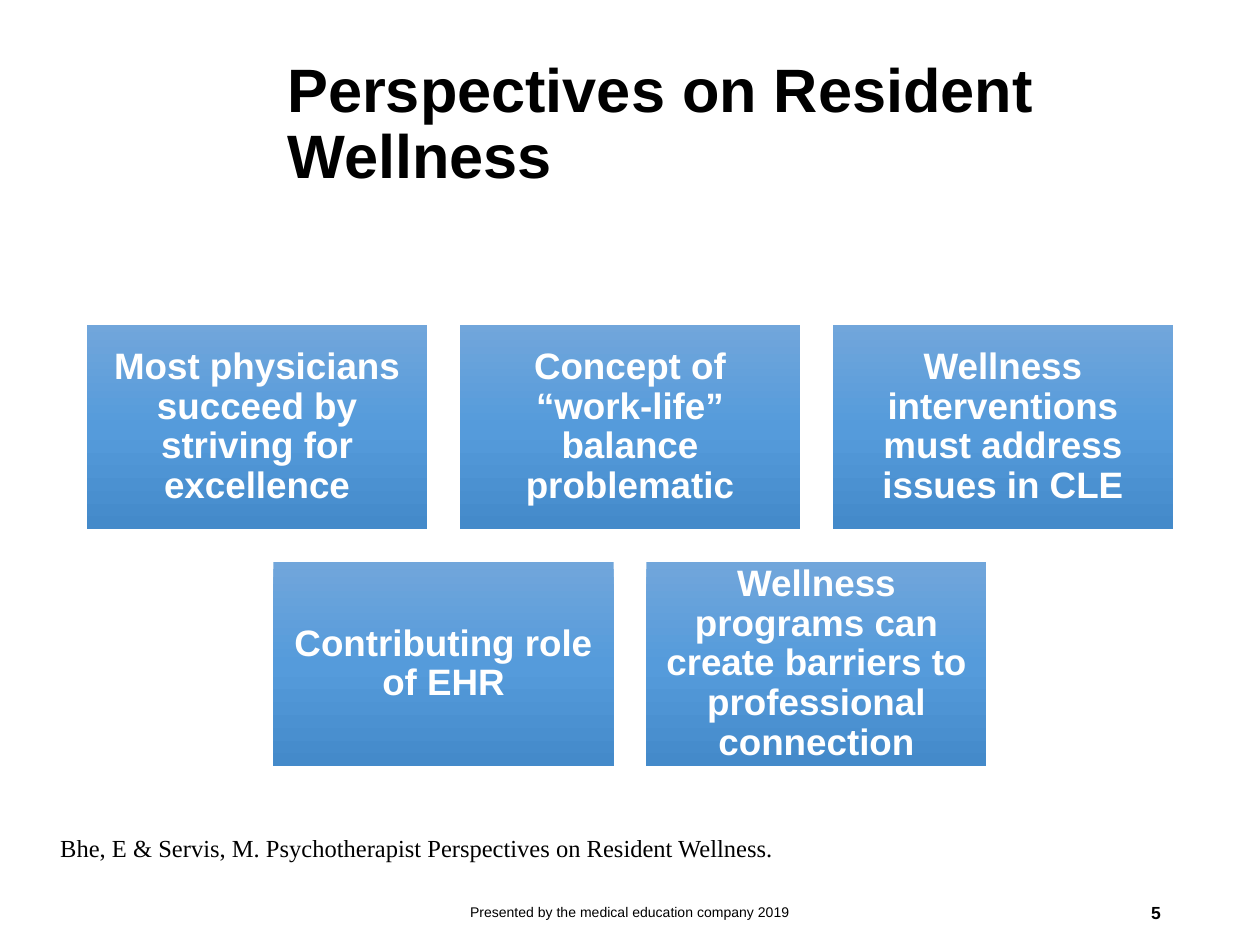
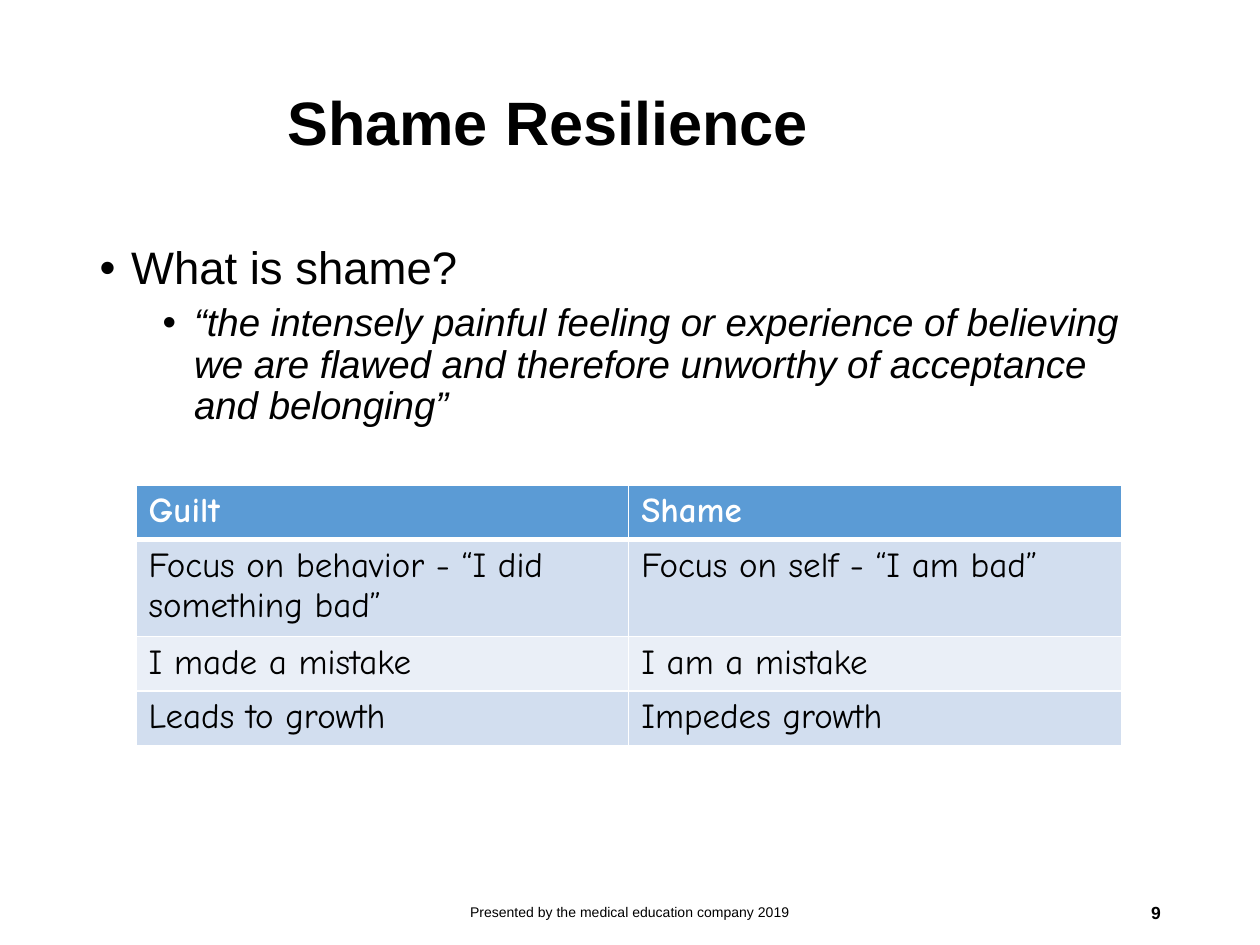
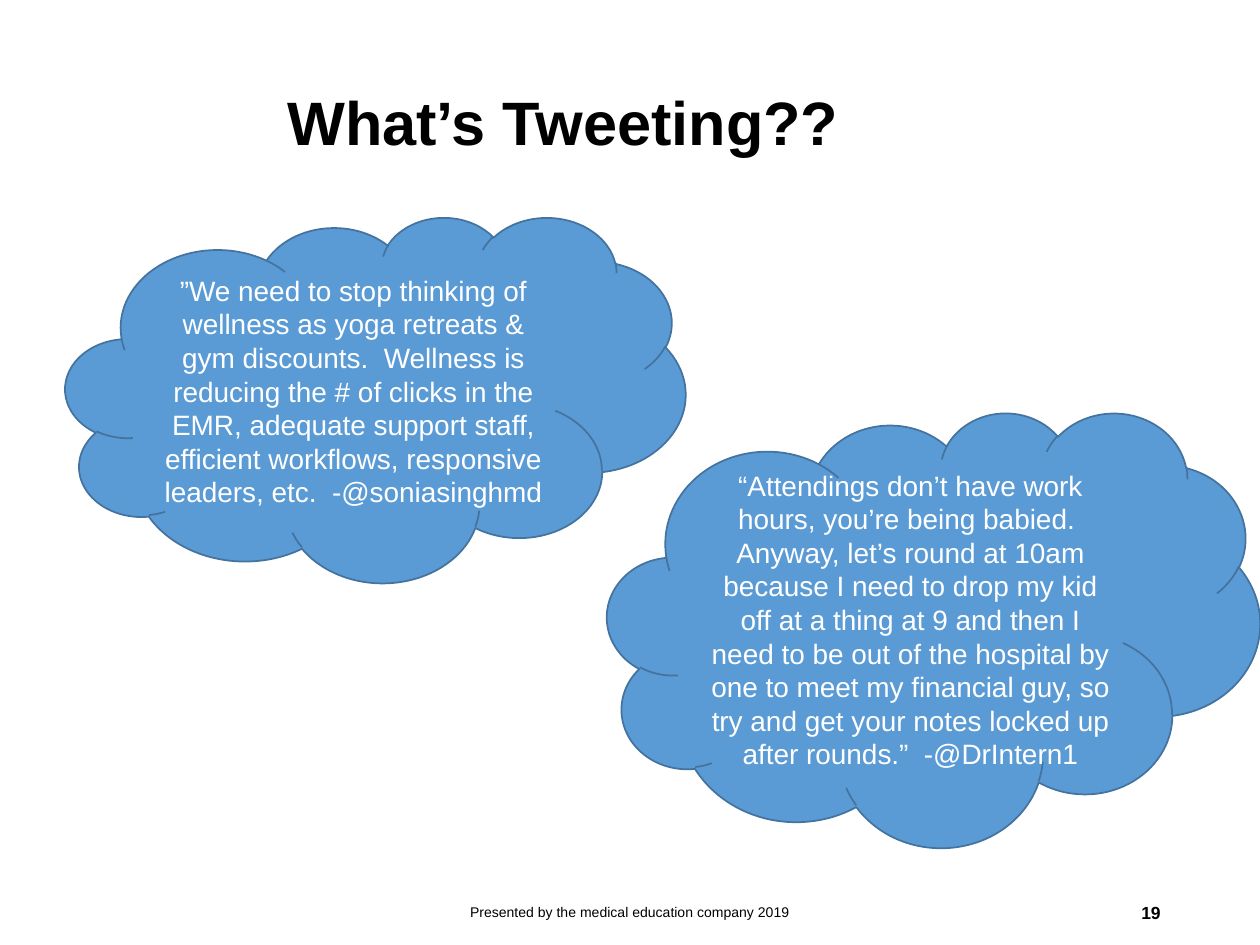
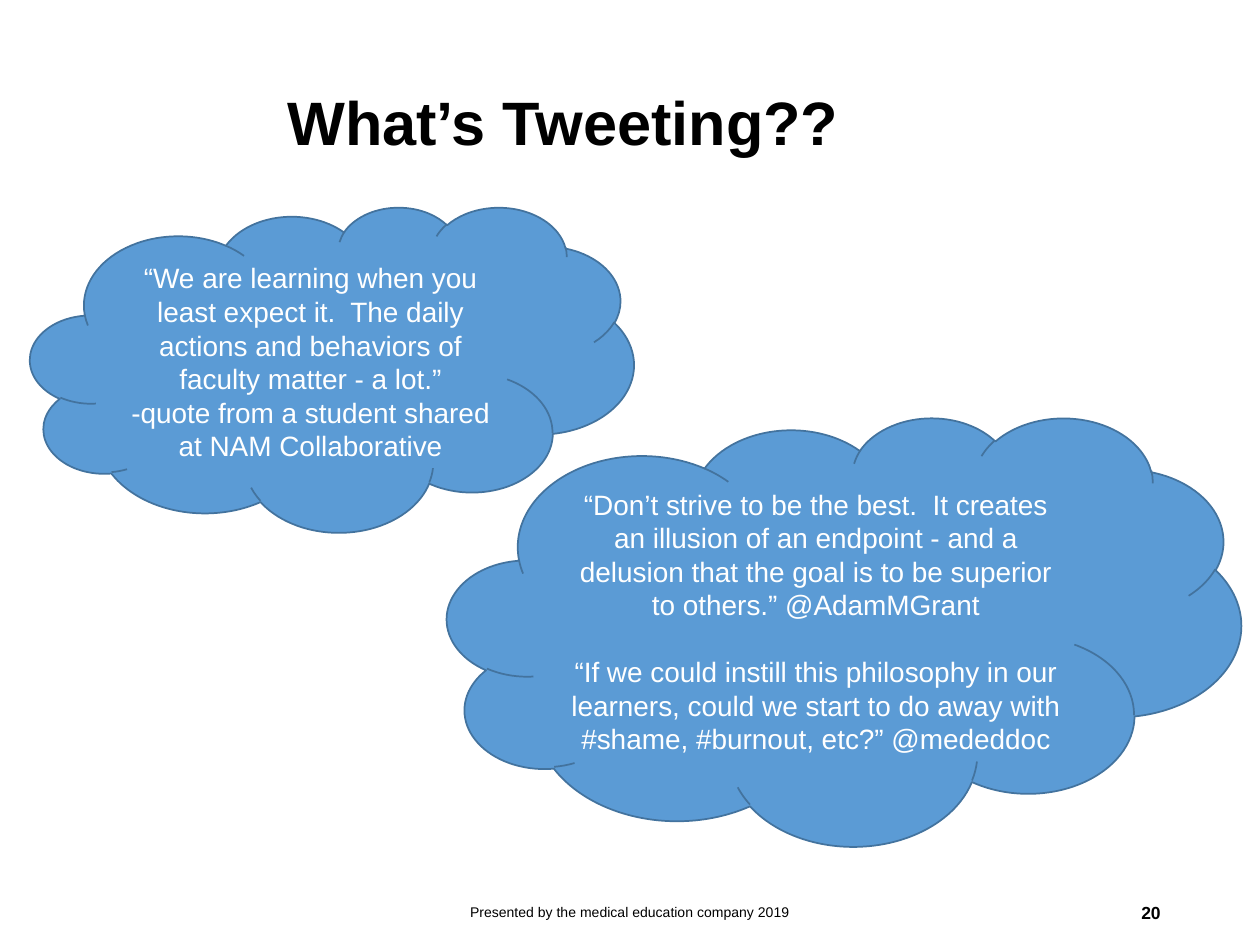
from copy import deepcopy
from dataclasses import dataclass

from lxml import etree
from pptx import Presentation
from pptx.dml.color import RGBColor
from pptx.enum.shapes import MSO_SHAPE
from pptx.enum.text import MSO_ANCHOR, MSO_AUTO_SIZE, PP_ALIGN
from pptx.oxml.ns import qn
from pptx.presentation import Presentation as Deck
from pptx.shapes.autoshape import Shape
from pptx.slide import Slide
from pptx.table import _Cell
from pptx.text.text import TextFrame, _Paragraph
from pptx.util import Inches, Length, Pt

LEFT, CENTER, RIGHT = PP_ALIGN.LEFT, PP_ALIGN.CENTER, PP_ALIGN.RIGHT
MIDDLE = MSO_ANCHOR.MIDDLE
RECTANGLE, CLOUD = MSO_SHAPE.RECTANGLE, MSO_SHAPE.CLOUD
NO_AUTOFIT = MSO_AUTO_SIZE.NONE
CONTENT_LAYOUT, TITLE_ONLY_LAYOUT = 1, 5


@dataclass(frozen=True)
class Theme:
    ink: RGBColor = RGBColor(0, 0, 0)
    white: RGBColor = RGBColor(255, 255, 255)
    accent: RGBColor = RGBColor.from_string("5B9BD5")
    outline: RGBColor = RGBColor.from_string("43739E")
    row_bands: tuple[RGBColor, ...] = (
        RGBColor.from_string("D2DEEF"), RGBColor.from_string("EAEFF7"))
    gradient: tuple[RGBColor, ...] = (
        RGBColor.from_string("71A6DB"), RGBColor.from_string("559BDB"),
        RGBColor.from_string("448ACA"))
    sans: str = "Arial"
    serif: str = "Times New Roman"
    casual: str = "Comic Neue"
    title: Length = Pt(35)
    bullet: Length = Pt(26)
    sub_bullet: Length = Pt(22)
    card: Length = Pt(21)
    table: Length = Pt(20)
    quote: Length = Pt(16)
    citation: Length = Pt(14)
    page: Length = Pt(10)
    footer: Length = Pt(8)
    tight: float = 0.9


THEME = Theme()


@dataclass(frozen=True)
class Box:
    """A place on the slide, in inches."""
    left: float
    top: float
    width: float
    height: float

    def lengths(self) -> tuple[Length, ...]:
        return tuple(Inches(v) for v in (self.left, self.top, self.width, self.height))


@dataclass(frozen=True)
class Tweet:
    cloud: Box
    quotes: tuple[str, ...]
    gap: float = 0


SLIDE_WIDTH, SLIDE_HEIGHT = 10, 7.5
TITLE_BOX = Box(2.18, 0.27, 7.14, 1.45)
BODY_BOX = Box(0.69, 1.9, 8.62, 4.85)
FOOTER_BOX = Box(3.31, 7.04, 3.38, 0.4)
PAGE_BOX = Box(7.06, 7.04, 2.25, 0.4)
CITATION_BOX = Box(0.38, 6.56, 5.86, 0.34)
TABLE_BOX = Box(1.08, 3.85, 7.82, 1.64)
CARD_WIDTH, CARD_HEIGHT, CARD_GAP, CARDS_TOP = 2.7, 1.62, 0.26, 2.58

FOOTER = "Presented by the medical education company 2019"
CITATION = "Bhe, E & Servis, M. Psychotherapist Perspectives on Resident Wellness."
CARD_ROWS = (
    ("Most physicians succeed by striving for excellence",
     "Concept of “work-life” balance problematic",
     "Wellness interventions must address issues in CLE"),
    ("Contributing role of EHR",
     "Wellness programs can create barriers to professional connection"),
)
SHAME_DEFINITION = (
    "“the intensely painful feeling or experience of believing we are flawed "
    "and therefore unworthy of acceptance and belonging”")
GUILT_VS_SHAME = (
    ("Guilt", "Shame"),
    ("Focus on behavior - “I did something bad”", "Focus on self - “I am bad”"),
    ("I made a mistake", "I am a mistake"),
    ("Leads to growth", "Impedes growth"),
)
WORK_TWEETS = (
    Tweet(Box(4.82, 3.27, 5.18, 3.45), (
        "“Attendings don’t have work hours, you’re being babied.  Anyway, let’s "
        "round at 10am because I need to drop my kid off at a thing at 9 and then "
        "I need to be out of the hospital by one to meet my financial guy, so try "
        "and get your notes locked up after rounds.”  -@DrIntern1",)),
    Tweet(Box(0.52, 1.72, 4.92, 2.9), (
        "”We need to stop thinking of wellness as yoga retreats & gym discounts.  "
        "Wellness is reducing the # of clicks in the EMR, adequate support staff, "
        "efficient workflows, responsive leaders, etc.  -@soniasinghmd",)),
)
LEARNING_TWEETS = (
    Tweet(Box(0.24, 1.64, 4.79, 2.58), (
        "“We are learning when you least expect it.  The daily actions and "
        "behaviors of faculty matter - a lot.”",
        "-quote from a student shared at NAM Collaborative")),
    Tweet(Box(3.55, 3.31, 6.3, 3.4), (
        "“Don’t strive to be the best.  It creates an illusion of an endpoint - "
        "and a delusion that the goal is to be superior to others.” @AdamMGrant",
        "“If we could instill this philosophy in our learners, could we start to "
        "do away with #shame, #burnout, etc?” @mededdoc"), gap=19),
)


def style(paragraph: _Paragraph, size: Length, color: RGBColor = THEME.ink,
          family: str = THEME.sans, align: PP_ALIGN = LEFT,
          bold: bool = False, italic: bool = False) -> None:
    paragraph.alignment = align
    font = paragraph.font
    font.name, font.size, font.bold, font.italic = family, size, bold, italic
    font.color.rgb = color


def place(shape: Shape, box: Box) -> None:
    shape.left, shape.top, shape.width, shape.height = box.lengths()


def add_label(slide: Slide, box: Box, text: str, wrap: bool = True) -> TextFrame:
    frame = slide.shapes.add_textbox(*box.lengths()).text_frame
    frame.word_wrap = wrap
    frame.text = text
    return frame


def start_slide(deck: Deck, layout: int, title: str, page: int) -> Slide:
    """Add a slide with the shared title, footer and page number."""
    slide = deck.slides.add_slide(deck.slide_layouts[layout])
    heading = slide.shapes.title
    place(heading, TITLE_BOX)
    frame = heading.text_frame
    frame.text = title
    frame.auto_size, frame.vertical_anchor = NO_AUTOFIT, MIDDLE
    frame.paragraphs[0].line_spacing = THEME.tight
    style(frame.paragraphs[0], THEME.title, bold=True)

    footer = add_label(slide, FOOTER_BOX, FOOTER)
    style(footer.paragraphs[0], THEME.footer, align=CENTER)
    number = add_label(slide, PAGE_BOX, str(page))
    style(number.paragraphs[0], THEME.page, align=RIGHT, bold=True)
    footer.vertical_anchor = number.vertical_anchor = MIDDLE
    return slide


def fill_gradient(shape: Shape, colors: tuple[RGBColor, ...]) -> None:
    """Fill from top to bottom with three evenly spaced colours."""
    shape.fill.gradient()
    shape.fill.gradient_angle = 270
    stop_list = shape._element.spPr.find(".//" + qn("a:gsLst"))
    stop_list.insert(1, deepcopy(stop_list[0]))
    for index, (stop, color) in enumerate(zip(shape.fill.gradient_stops, colors)):
        stop.position = index / (len(colors) - 1)
        stop.color.rgb = color


def add_card(slide: Slide, box: Box, text: str) -> None:
    card = slide.shapes.add_shape(RECTANGLE, *box.lengths())
    card.shadow.inherit = False
    fill_gradient(card, THEME.gradient)
    card.line.fill.background()
    frame = card.text_frame
    frame.margin_left = frame.margin_right = Inches(0.09)
    frame.margin_top = frame.margin_bottom = Inches(0.09)
    frame.word_wrap, frame.vertical_anchor = True, MIDDLE
    frame.text = text
    frame.paragraphs[0].line_spacing = THEME.tight
    style(frame.paragraphs[0], THEME.card, THEME.white, align=CENTER, bold=True)


def add_card_rows(slide: Slide) -> None:
    """Draw each row of cards centred on the slide."""
    for row, texts in enumerate(CARD_ROWS):
        row_width = len(texts) * (CARD_WIDTH + CARD_GAP) - CARD_GAP
        left = (SLIDE_WIDTH - row_width) / 2
        top = CARDS_TOP + row * (CARD_HEIGHT + CARD_GAP)
        for column, text in enumerate(texts):
            add_card(slide, Box(left + column * (CARD_WIDTH + CARD_GAP), top,
                                CARD_WIDTH, CARD_HEIGHT), text)


def add_tweet(slide: Slide, tweet: Tweet) -> None:
    cloud = slide.shapes.add_shape(CLOUD, *tweet.cloud.lengths())
    cloud.shadow.inherit = False
    cloud.fill.solid()
    cloud.fill.fore_color.rgb = THEME.accent
    cloud.line.color.rgb = THEME.outline
    cloud.line.width = Pt(1)
    frame = cloud.text_frame
    frame.word_wrap, frame.vertical_anchor = True, MIDDLE
    frame.text = "\n".join(tweet.quotes)
    for index, paragraph in enumerate(frame.paragraphs):
        if index:
            paragraph.space_before = Pt(tweet.gap)
        style(paragraph, THEME.quote, THEME.white, align=CENTER)


def set_bullet(paragraph: _Paragraph, indent: float) -> None:
    properties = paragraph._p.get_or_add_pPr()
    properties.set("marL", str(Inches(indent)))
    properties.set("indent", str(Inches(-0.25)))
    etree.SubElement(properties, qn("a:buChar")).set("char", "•")


def fill_definition(slide: Slide) -> None:
    body = slide.placeholders[1]
    place(body, BODY_BOX)
    frame = body.text_frame
    frame.auto_size = NO_AUTOFIT
    frame.text = "What is shame?\n" + SHAME_DEFINITION
    question, definition = frame.paragraphs
    definition.level = 1
    for paragraph, indent, before in ((question, 0.25, 0), (definition, 0.75, 5)):
        set_bullet(paragraph, indent)
        paragraph.line_spacing = THEME.tight
        paragraph.space_before = Pt(before)
    style(question, THEME.bullet)
    style(definition, THEME.sub_bullet, italic=True)


def set_borders(cell: _Cell, **widths: float) -> None:
    """Draw white borders; widths are in points, keyed by side: L, R, T, B."""
    properties = cell._tc.get_or_add_tcPr()
    for side, width in widths.items():
        line = etree.SubElement(properties, qn(f"a:ln{side}"), w=str(Pt(width)))
        fill = etree.SubElement(line, qn("a:solidFill"))
        etree.SubElement(fill, qn("a:srgbClr"), val=str(THEME.white))


def add_comparison(slide: Slide) -> None:
    table = slide.shapes.add_table(
        len(GUILT_VS_SHAME), len(GUILT_VS_SHAME[0]), *TABLE_BOX.lengths()).table
    table.horz_banding = False
    for row, texts in enumerate(GUILT_VS_SHAME):
        header = row == 0
        for column, text in enumerate(texts):
            cell = table.cell(row, column)
            set_borders(cell, L=1, R=1, T=3 if row == 1 else 1, B=3 if header else 1)
            cell.fill.solid()
            cell.fill.fore_color.rgb = (
                THEME.accent if header else THEME.row_bands[(row - 1) % 2])
            cell.text = text
            style(cell.text_frame.paragraphs[0], THEME.table,
                  THEME.white if header else THEME.ink, THEME.casual, bold=header)


def main() -> None:
    deck = Presentation()
    deck.slide_width, deck.slide_height = Inches(SLIDE_WIDTH), Inches(SLIDE_HEIGHT)

    perspectives = start_slide(
        deck, TITLE_ONLY_LAYOUT, "Perspectives on Resident Wellness", 5)
    add_card_rows(perspectives)
    citation = add_label(perspectives, CITATION_BOX, CITATION, wrap=False)
    style(citation.paragraphs[0], THEME.citation, family=THEME.serif)

    resilience = start_slide(deck, CONTENT_LAYOUT, "Shame Resilience", 9)
    fill_definition(resilience)
    add_comparison(resilience)

    for page, tweets in ((19, WORK_TWEETS), (20, LEARNING_TWEETS)):
        tweeting = start_slide(deck, TITLE_ONLY_LAYOUT, "What’s Tweeting??", page)
        for tweet in tweets:
            add_tweet(tweeting, tweet)

    deck.save("out.pptx")


if __name__ == "__main__":
    main()
